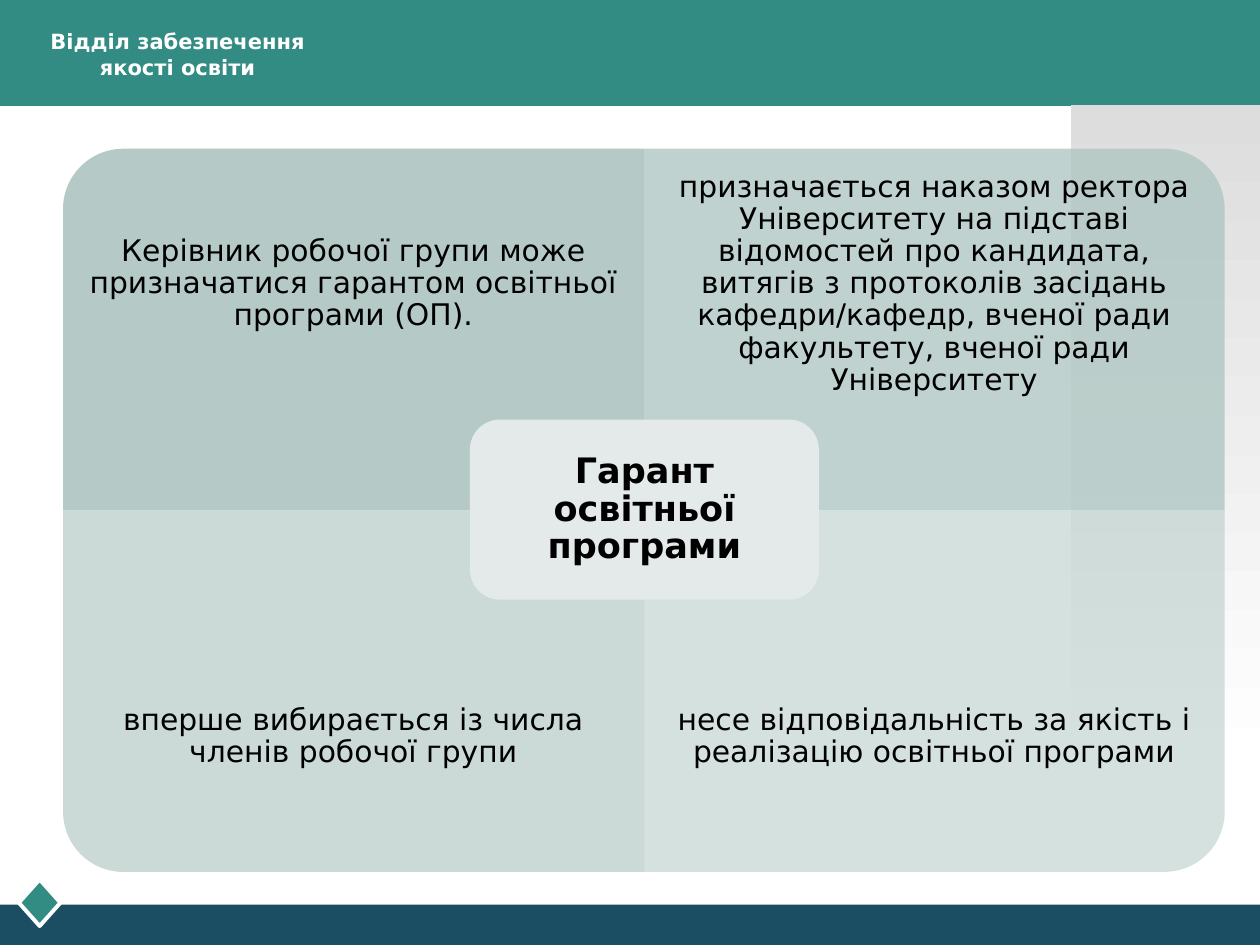
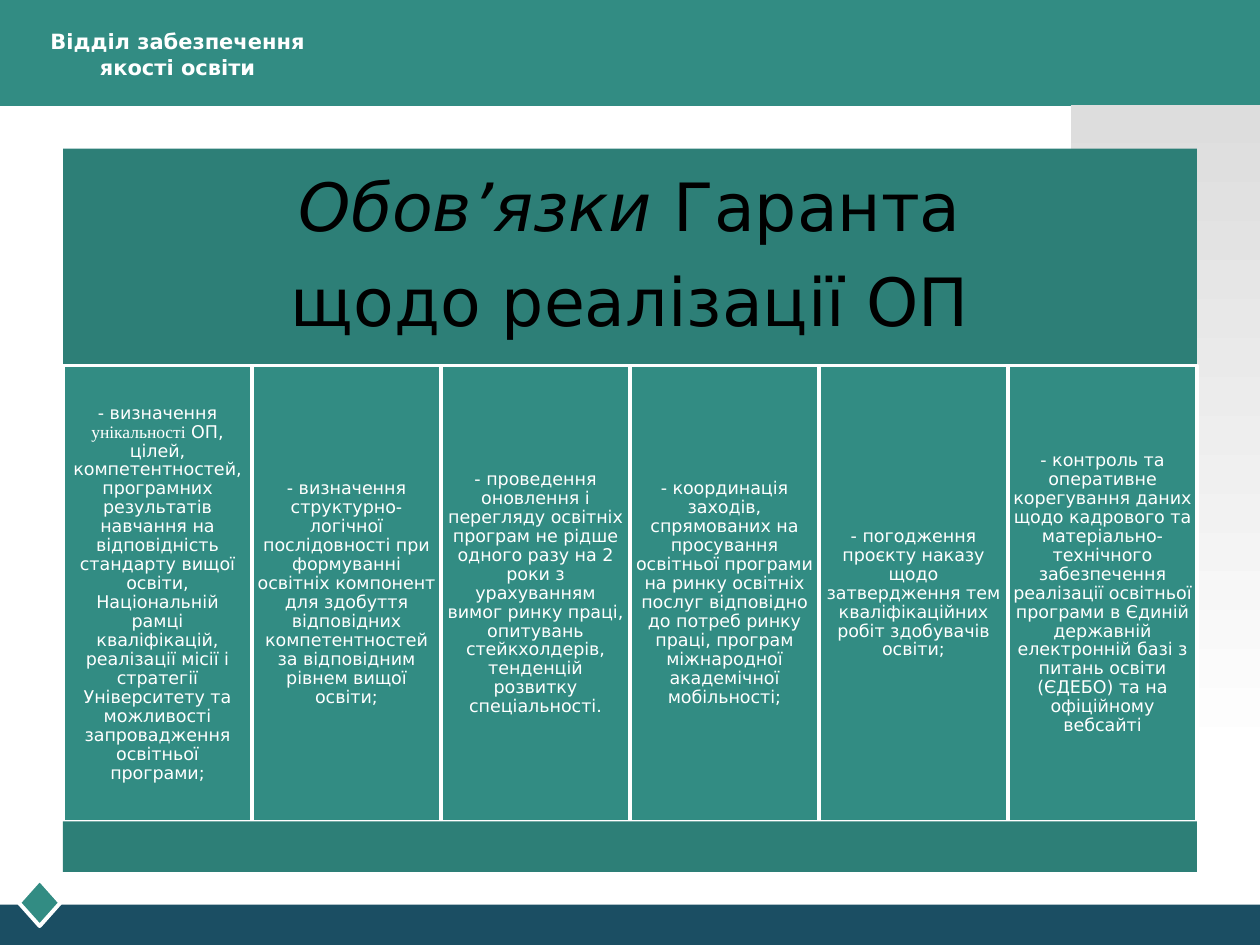
"""Build two slides about the guarantor of an educational programme."""
from dataclasses import dataclass

import pptx
import pptx.dml.color
import pptx.enum.shapes
import pptx.enum.text
import pptx.oxml
import pptx.oxml.ns
import pptx.util
from pptx.util import Inches

RGBColor = pptx.dml.color.RGBColor
MSO_SHAPE = pptx.enum.shapes.MSO_SHAPE
MSO_ANCHOR = pptx.enum.text.MSO_ANCHOR
PP_ALIGN = pptx.enum.text.PP_ALIGN

TEAL = RGBColor(0x32, 0x8C, 0x83)
DARK_TEAL = RGBColor(0x2D, 0x7F, 0x77)
NAVY = RGBColor(0x1B, 0x4E, 0x63)
SAGE = RGBColor(0xAD, 0xC5, 0xC1)
PALE_SAGE = RGBColor(0xE3, 0xEA, 0xE9)
GREY = RGBColor(0xDD, 0xDD, 0xDD)
WHITE = RGBColor(0xFF, 0xFF, 0xFF)
BLACK = RGBColor(0x00, 0x00, 0x00)

BODY_FONT = "DejaVu Sans"
LEFT, TOP = 0.5, 1.18


@dataclass(frozen=True)
class Box:
    x: float
    y: float
    w: float
    h: float

    def lengths(self) -> list:
        return [Inches(v) for v in (self.x, self.y, self.w, self.h)]

    def turned(self) -> "Box":
        return Box(self.x + (self.w - self.h) / 2, self.y + (self.h - self.w) / 2, self.h, self.w)


@dataclass(frozen=True)
class Run:
    text: str
    font: str = BODY_FONT
    italic: bool = False


@dataclass(frozen=True)
class Style:
    size: int
    color: RGBColor = BLACK
    bold: bool = False
    inset: float = 0.13


@dataclass(frozen=True)
class Quadrant:
    col: int
    row: int
    rotation: int
    opacity: int
    text: str


DEPARTMENT_STYLE = Style(12, WHITE, bold=True)
QUADRANT_STYLE = Style(17)
CENTRE_STYLE = Style(20, bold=True, inset=0.08)
BANNER_STYLE = Style(38, inset=0.16)
DUTY_STYLE = Style(10, WHITE, inset=0.04)

QUADRANTS = [
    Quadrant(0, 0, 270, 90, "Керівник робочої групи може призначатися гарантом освітньої програми (ОП)."),
    Quadrant(1, 0, 0, 77, "призначається наказом ректора Університету на підставі відомостей про "
             "кандидата, витягів з протоколів засідань кафедри/кафедр, вченої ради "
             "факультету, вченої ради Університету"),
    Quadrant(0, 1, 180, 63, "вперше вибирається із числа членів робочої групи"),
    Quadrant(1, 1, 90, 50, "несе відповідальність за якість і реалізацію освітньої програми"),
]

DUTIES = [
    [Run("- визначення "), Run("унікальності", "Times New Roman"),
     Run(" ОП, цілей, компетентностей, програмних результатів навчання на відповідність "
         "стандарту вищої освіти, Національній рамці кваліфікацій, реалізації місії і "
         "стратегії Університету та можливості запровадження освітньої програми;")],
    [Run("- визначення структурно-логічної послідовності при формуванні освітніх компонент "
         "для здобуття відповідних компетентностей за відповідним рівнем вищої освіти;")],
    [Run("- проведення оновлення і перегляду освітніх програм не рідше одного разу на 2 роки "
         "з урахуванням вимог ринку праці, опитувань стейкхолдерів, тенденцій розвитку "
         "спеціальності.")],
    [Run("- координація заходів, спрямованих на просування освітньої програми на ринку "
         "освітніх послуг відповідно до потреб ринку праці, програм міжнародної "
         "академічної мобільності;")],
    [Run("- погодження проєкту наказу щодо затвердження тем кваліфікаційних робіт "
         "здобувачів освіти;")],
    [Run("- контроль та оперативне корегування даних щодо кадрового та "
         "матеріально-технічного забезпечення реалізації освітньої програми в Єдиній "
         "державній електронній базі з питань освіти (ЄДЕБО) та на офіційному вебсайті")],
]


def add_filled(slide, kind, box: Box, fill: RGBColor, line: RGBColor | None = None,
               weight: float = 2, rotation: int = 0, opacity: int = 100):
    sp = slide.shapes.add_shape(kind, *box.lengths())
    sp.shadow.inherit = False
    sp.rotation = rotation
    sp.fill.solid()
    sp.fill.fore_color.rgb = fill
    if opacity < 100:
        clr = sp._element.spPr.find(".//" + pptx.oxml.ns.qn("a:srgbClr"))
        alpha = pptx.oxml.parse_xml(f'<a:alpha {pptx.oxml.ns.nsdecls("a")} val="{opacity * 1000}"/>')
        clr.append(alpha)
    if line is None:
        sp.line.fill.background()
    else:
        sp.line.color.rgb = line
        sp.line.width = pptx.util.Pt(weight)
    return sp


def add_run(p, run: Run, style: Style) -> None:
    r = p.add_run()
    r.text = run.text
    r.font.name = run.font
    r.font.size = pptx.util.Pt(style.size)
    r.font.bold = style.bold
    r.font.italic = run.italic
    r.font.color.rgb = style.color


def write(sp, paragraphs: list[list[Run]], style: Style) -> None:
    tf = sp.text_frame
    tf.word_wrap = True
    tf.auto_size = pptx.enum.text.MSO_AUTO_SIZE.NONE
    tf.vertical_anchor = MSO_ANCHOR.MIDDLE
    tf.margin_left = tf.margin_right = tf.margin_top = tf.margin_bottom = Inches(style.inset)
    for i, runs in enumerate(paragraphs):
        p = tf.add_paragraph() if i else tf.paragraphs[0]
        p.alignment = PP_ALIGN.CENTER
        p.line_spacing = 0.9
        p.space_before = pptx.util.Pt(0)
        p.space_after = pptx.util.Pt(0.35 * style.size)
        for run in runs:
            add_run(p, run, style)


def place(sp, box: Box) -> None:
    sp.left, sp.top, sp.width, sp.height = box.lengths()


def build_frame(slide) -> None:
    header = add_filled(slide, MSO_SHAPE.RECTANGLE, Box(0, 0, 10, 0.84), TEAL)
    footer = add_filled(slide, MSO_SHAPE.RECTANGLE, Box(0, 7.18, 10, 0.33), NAVY)
    diamond = add_filled(slide, MSO_SHAPE.DIAMOND, Box(0.15, 6.98, 0.33, 0.37), TEAL, WHITE, 2.25)
    side = add_filled(slide, MSO_SHAPE.RECTANGLE, Box(8.5, 0.83, 1.5, 5.25), GREY)
    side.fill.gradient()
    side.fill.gradient_angle = 270
    for stop, color in zip(side.fill.gradient_stops, (GREY, WHITE)):
        stop.color.rgb = color
    tree = slide.slide_layout.shapes._spTree
    for i, sp in enumerate((header, footer, diamond, side)):
        sp._element.nvSpPr.cNvPr.set("id", str(100 + i))
        tree.insert(2 + i, sp._element)


def add_department(slide) -> None:
    sp = slide.shapes.add_textbox(*Box(0.12, 0.18, 2.58, 0.66).lengths())
    sp.text_frame.word_wrap = True
    p = sp.text_frame.paragraphs[0]
    p.alignment = PP_ALIGN.CENTER
    add_run(p, Run("Відділ забезпечення якості освіти"), DEPARTMENT_STYLE)


def build_guarantor(slide) -> None:
    add_department(slide)
    w, h, text_h = 4.61, 2.87, 2.15
    for q in QUADRANTS:
        x, y = LEFT + q.col * w, TOP + q.row * h
        box = Box(x, y, w, h)
        add_filled(slide, MSO_SHAPE.ROUND_1_RECTANGLE, box.turned() if q.rotation % 180 else box,
                   SAGE, rotation=q.rotation, opacity=q.opacity)
        text = slide.shapes.add_textbox(*Box(x, y + q.row * (h - text_h), w, text_h).lengths())
        write(text, [[Run(q.text)]], QUADRANT_STYLE)
    add_filled(slide, MSO_SHAPE.ROUNDED_RECTANGLE, Box(3.73, 3.33, 2.77, 1.43), PALE_SAGE)
    title = slide.shapes.title
    place(title, Box(3.8, 3.4, 2.63, 1.29))
    write(title, [[Run("Гарант освітньої програми")]], CENTRE_STYLE)
    slide.shapes._spTree.append(title._element)


def build_duties(slide) -> None:
    add_department(slide)
    title = slide.shapes.title
    place(title, Box(LEFT, TOP, 9, 1.72))
    title.fill.solid()
    title.fill.fore_color.rgb = DARK_TEAL
    write(title, [[Run("Обов’язки ", italic=True), Run("Гаранта")],
                  [Run("щодо реалізації ОП")]], BANNER_STYLE)
    w = 9 / len(DUTIES)
    for i, runs in enumerate(DUTIES):
        card = add_filled(slide, MSO_SHAPE.RECTANGLE, Box(LEFT + i * w, 2.9, w, 3.62), TEAL, WHITE)
        write(card, [runs], DUTY_STYLE)
    add_filled(slide, MSO_SHAPE.RECTANGLE, Box(LEFT, 6.52, 9, 0.4), DARK_TEAL)


def main() -> None:
    prs = pptx.Presentation()
    prs.slide_width, prs.slide_height = Inches(10), Inches(7.5)
    layout = prs.slide_layouts.get_by_name("Title Only")
    guarantor, duties = (prs.slides.add_slide(layout) for _ in range(2))
    build_frame(guarantor)
    build_guarantor(guarantor)
    build_duties(duties)
    prs.save("out.pptx")


if __name__ == "__main__":
    main()
